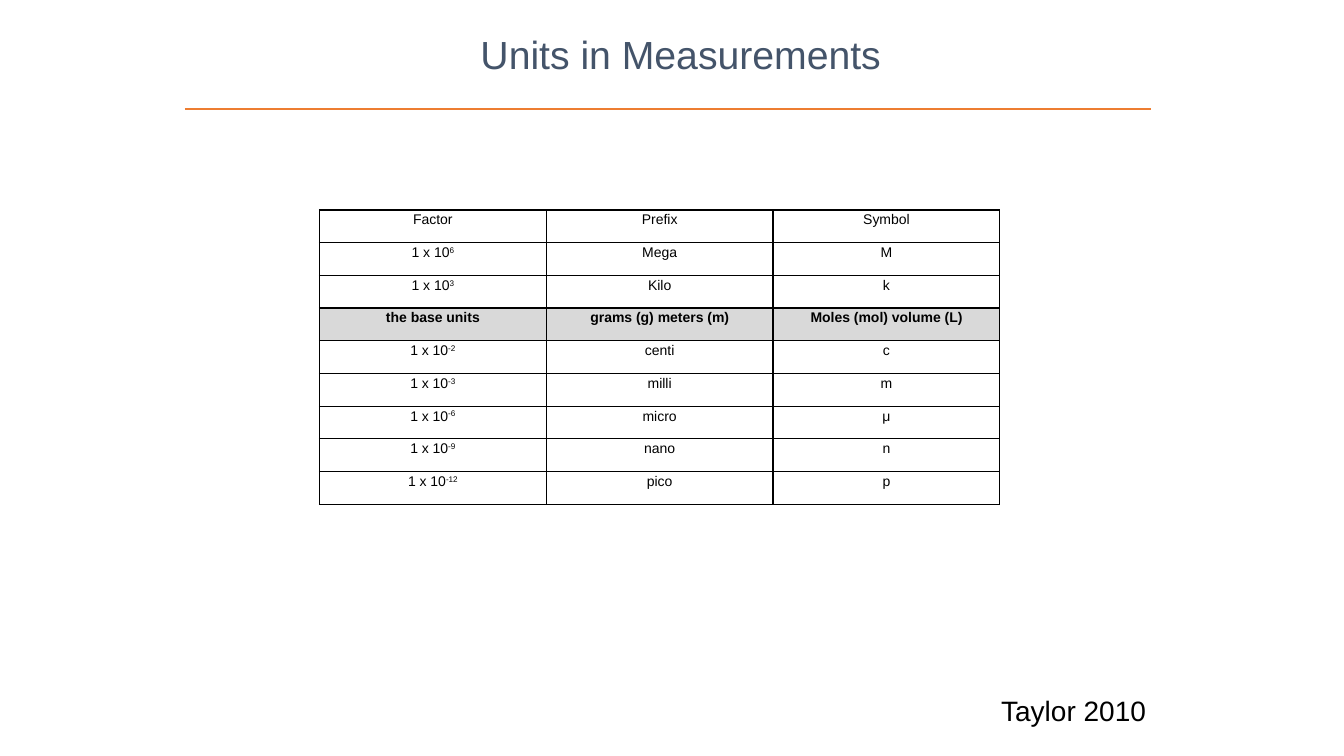
from lxml.etree import SubElement as Sub
from pptx import Presentation
from pptx.dml.color import RGBColor
from pptx.enum.shapes import MSO_CONNECTOR as Link
from pptx.enum.text import MSO_ANCHOR as Anchor, MSO_AUTO_SIZE as Fit, PP_ALIGN as Align
from pptx.oxml.ns import qn
from pptx.util import Cm, Pt

FONT = "Arial"
BLACK = "000000"
ROWS = [
    ("Factor", "Prefix", "Symbol"),
    ("1 x 10^6", "Mega", "M"),
    ("1 x 10^3", "Kilo", "k"),
    ("the base units", "grams (g) meters (m)", "Moles (mol) volume (L)"),
    ("1 x 10^-2", "centi", "c"),
    ("1 x 10^-3", "milli", "m"),
    ("1 x 10^-6", "micro", "μ"),
    ("1 x 10^-9", "nano", "n"),
    ("1 x 10^-12", "pico", "p"),
]
BASE = 3


def paint(target, color):
    """Give a fill or a font colour from a hex string."""
    target.rgb = RGBColor.from_string(color)


def write(frame, text, size=10, color=BLACK, bold=False, align=Align.LEFT,
          space=None, after=None):
    """Write one paragraph; what follows a ^ is superscript."""
    para = frame.paragraphs[0]
    para.alignment = align
    if space:
        para.line_spacing = space
    if after:
        para.space_after = Pt(after)
    for level, part in enumerate(text.split("^")):
        run = para.add_run()
        run.text = part
        font = run.font
        font.name, font.size, font.bold = FONT, Pt(size), bold
        paint(font.color, color)
        if level:
            font._element.set("baseline", "30000")


def label(slide, text, left, top, width, height, **style):
    box = slide.shapes.add_textbox(Cm(left), Cm(top), Cm(width), Cm(height))
    frame = box.text_frame
    frame.word_wrap = False
    frame.auto_size = Fit.SHAPE_TO_FIT_TEXT
    write(frame, text, **style)


def rule(slide, left, right, top, color):
    line = slide.shapes.add_connector(
        Link.STRAIGHT, Cm(left), Cm(top), Cm(right), Cm(top))
    line.line.width = Pt(1)
    paint_line = line.line.fill
    paint_line.solid()
    paint(paint_line.fore_color, color)
    Sub(line._element.spPr, qn("a:effectLst"))


def border(cell):
    props = cell._tc.get_or_add_tcPr()
    for side in ("lnL", "lnR", "lnT", "lnB"):
        edge = Sub(props, qn(f"a:{side}"), w=str(Pt(1)))
        solid = Sub(edge, qn("a:solidFill"))
        Sub(solid, qn("a:srgbClr"), val=BLACK)


def fill(cell, color=None):
    if color:
        cell.fill.solid()
        paint(cell.fill.fore_color, color)
    else:
        cell.fill.background()


def grid(slide, rows, left, top, width, height):
    shape = slide.shapes.add_table(
        len(rows), len(rows[0]), Cm(left), Cm(top), Cm(width), Cm(height))
    table = shape.table
    table.first_row = table.horz_banding = False
    for r, row in enumerate(rows):
        for c, text in enumerate(row):
            cell = table.cell(r, c)
            cell.margin_left = cell.margin_right = Cm(0.18)
            cell.margin_top = cell.margin_bottom = 0
            cell.vertical_anchor = Anchor.TOP
            border(cell)
            fill(cell, "D9D9D9" if r == BASE else None)
            write(cell.text_frame, text, bold=r == BASE,
                  align=Align.CENTER, space=1.15, after=10)


def main():
    deck = Presentation()
    deck.slide_width, deck.slide_height = Cm(33.87), Cm(19.05)
    slide = deck.slides.add_slide(deck.slide_layouts[6])
    label(slide, "Units in Measurements", 11.86, 0.64, 10.74, 1.45,
          size=28, color="44546A")
    rule(slide, 4.66, 29, 2.75, "ED7D31")
    label(slide, "Taylor 2010", 24.98, 17.36, 4.19, 1.11, size=20)
    grid(slide, ROWS, 8.05, 5.29, 17.15, 7.42)
    deck.save("out.pptx")


if __name__ == "__main__":
    main()
